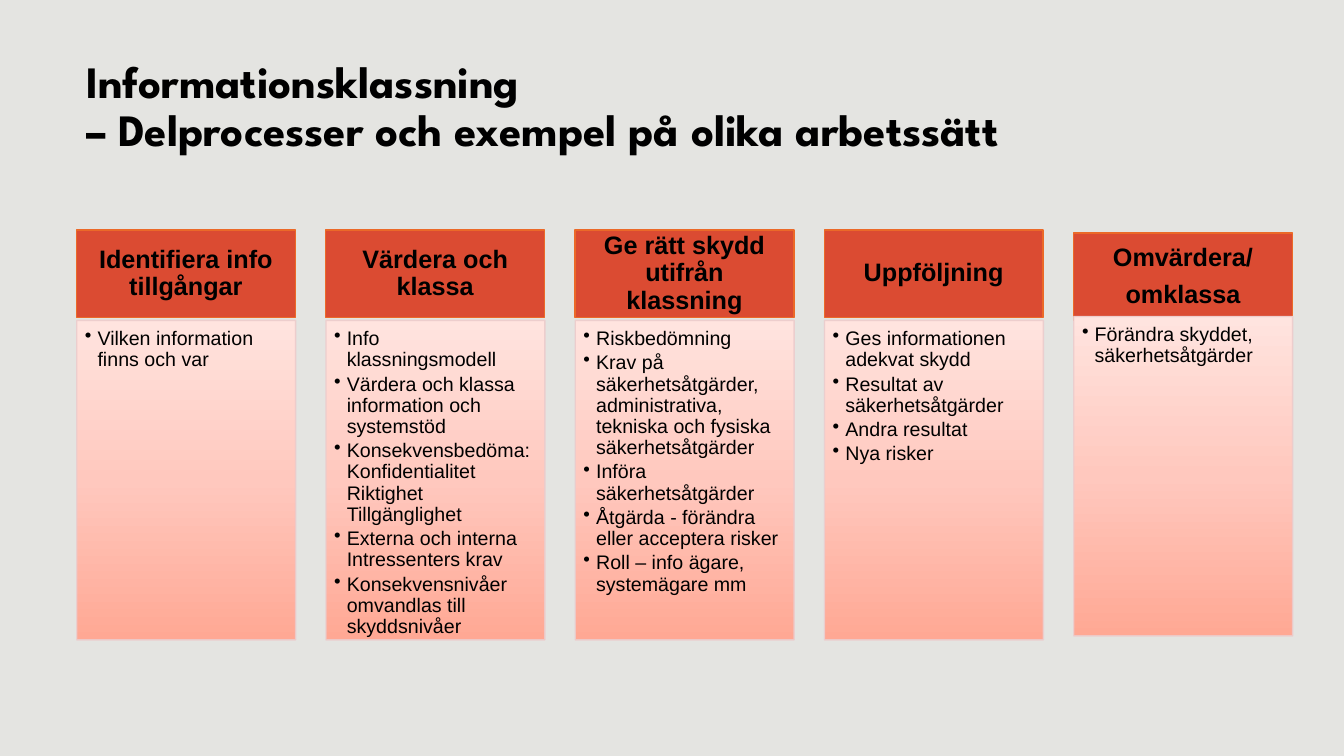
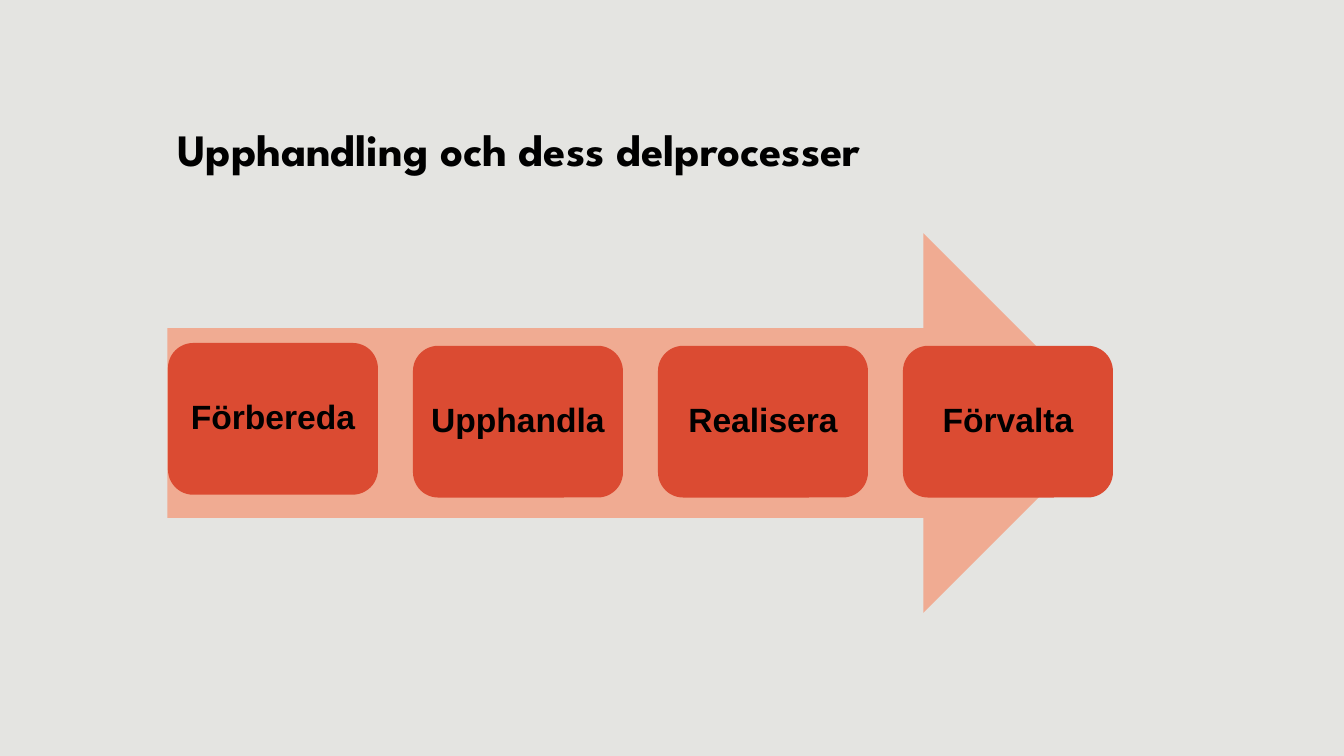
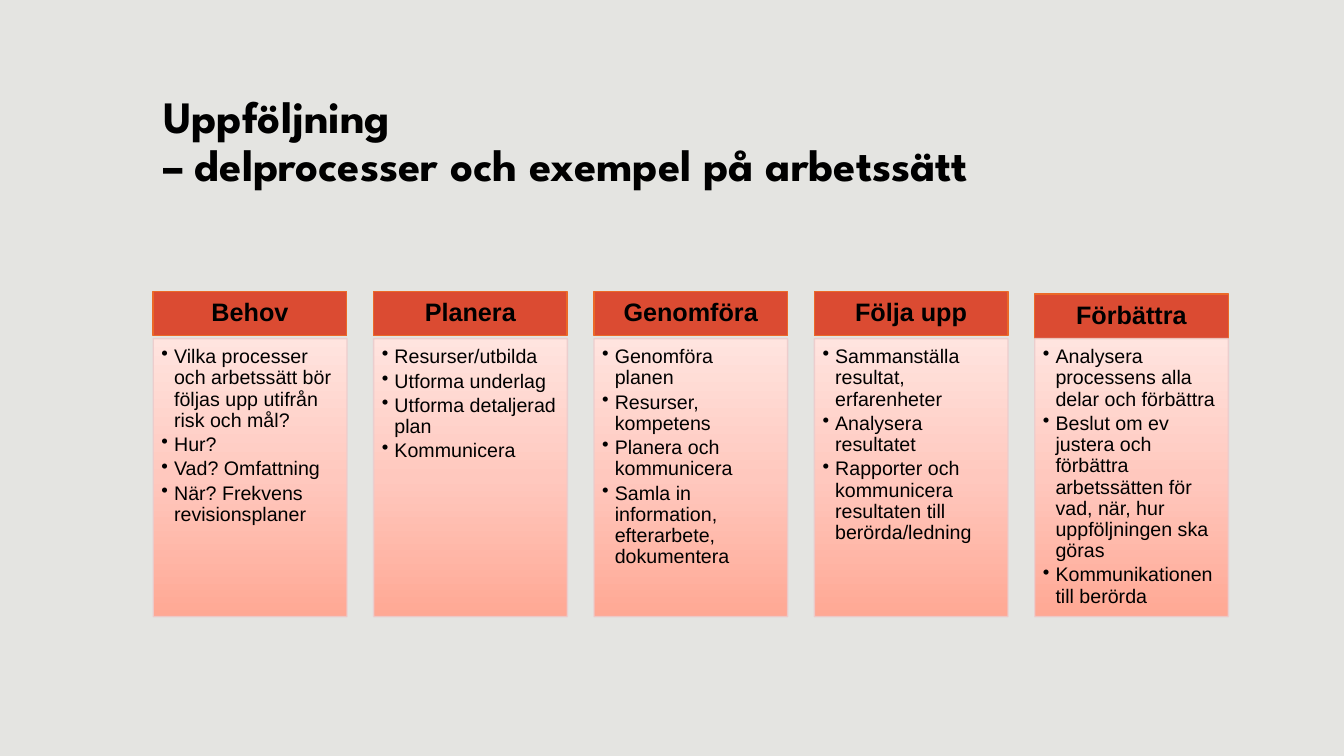
"""Build three slides about the subprocesses of information security work."""
from copy import deepcopy
from dataclasses import dataclass

from lxml import etree
from pptx import Presentation
from pptx.dml.color import RGBColor
from pptx.enum.shapes import MSO_SHAPE
from pptx.enum.text import MSO_ANCHOR, PP_ALIGN
from pptx.oxml.ns import qn
from pptx.util import Pt

RECT = MSO_SHAPE.RECTANGLE
ROUND = MSO_SHAPE.ROUNDED_RECTANGLE
ARROW = MSO_SHAPE.RIGHT_ARROW
TOP, MID = MSO_ANCHOR.TOP, MSO_ANCHOR.MIDDLE
LEFT, CENTER = PP_ALIGN.LEFT, PP_ALIGN.CENTER

COLORS = {
    "back": "E4E4E1", "text": "000000", "red": "DB4B32", "edge": "EB6928",
    "arrow": "F0AB92", "rim": "ECCCCC",
    "low": "FFA894", "half": "FFC8BE", "high": "FFE4DF",
}
FADE = ((0, "low"), (0.5, "half"), (1, "high"))


@dataclass
class Box:
    x: float
    y: float
    w: float
    h: float


@dataclass
class Style:
    size: float
    after: float = 0
    bold: bool = True
    face: str = "Arial"
    align: int = CENTER
    anchor: int = MID
    inset: tuple = (7.2, 7.2, 7.2, 7.2)
    bullet: bool = False


@dataclass
class Column:
    head: list
    items: list


@dataclass
class Grid:
    """Place of the first column, the step, and the shift of the last one."""
    head: Box
    body: Box
    step: float
    sink: float
    lift: float


TITLE = Style(32, face="League Spartan", align=LEFT, anchor=TOP,
              inset=(7.2, 3.6, 7.2, 3.6))
HEAD = Style(18, after=7.2, inset=(10.08, 5.76, 10.08, 5.76))
BODY = Style(14, after=2.2, bold=False, align=LEFT, anchor=TOP,
             inset=(5.88, 5.88, 7.84, 8.82), bullet=True)
STEP = Style(24)

CLASS_GRID = Grid(Box(54.6, 164.2, 156.4, 62.6), Box(54.8, 228.9, 156.4, 228.2),
                  178.05, 2.2, 2.8)
CHECK_GRID = Grid(Box(109.4, 208.2, 138.4, 31.7), Box(109.5, 241.9, 138.4, 198.6),
                  157.4, 1.8, 0)

CLASS_COLS = [
    Column(["Identifiera info tillgångar"], ["Vilken information finns och var"]),
    Column(["Värdera och klassa"], [
        "Info klassningsmodell",
        "Värdera och klassa information och systemstöd",
        "Konsekvensbedöma: Konfidentialitet Riktighet Tillgänglighet",
        "Externa och interna Intressenters krav",
        "Konsekvensnivåer omvandlas till skyddsnivåer"]),
    Column(["Ge rätt skydd utifrån klassning"], [
        "Riskbedömning",
        "Krav på säkerhetsåtgärder, administrativa, tekniska och fysiska "
        "säkerhetsåtgärder",
        "Införa säkerhetsåtgärder",
        "Åtgärda - förändra eller acceptera risker",
        "Roll – info ägare, systemägare mm"]),
    Column(["Uppföljning"], [
        "Ges informationen adekvat skydd", "Resultat av säkerhetsåtgärder",
        "Andra resultat", "Nya risker"]),
    Column(["Omvärdera/", "omklassa"], ["Förändra skyddet, säkerhetsåtgärder"]),
]
CHECK_COLS = [
    Column(["Behov"], [
        "Vilka processer och arbetssätt bör följas upp utifrån risk och mål?",
        "Hur?", "Vad? Omfattning", "När? Frekvens revisionsplaner"]),
    Column(["Planera"], [
        "Resurser/utbilda", "Utforma underlag", "Utforma detaljerad plan",
        "Kommunicera"]),
    Column(["Genomföra"], [
        "Genomföra planen", "Resurser, kompetens", "Planera och kommunicera",
        "Samla in information, efterarbete, dokumentera"]),
    Column(["Följa upp"], [
        "Sammanställa resultat, erfarenheter", "Analysera resultatet",
        "Rapporter och kommunicera resultaten till berörda/ledning"]),
    Column(["Förbättra"], [
        "Analysera processens alla delar och förbättra",
        "Beslut om ev justera och förbättra arbetssätten för vad, när, hur "
        "uppföljningen ska göras",
        "Kommunikationen till berörda"]),
]
STEPS = ["Förbereda", "Upphandla", "Realisera", "Förvalta"]


def color(name: str) -> RGBColor:
    return RGBColor.from_string(COLORS[name])


def place(box: Box) -> tuple:
    return Pt(box.x), Pt(box.y), Pt(box.w), Pt(box.h)


def write(shape, lines: list, style: Style) -> None:
    frame = shape.text_frame
    frame.word_wrap = True
    frame.vertical_anchor = style.anchor
    (frame.margin_left, frame.margin_top,
     frame.margin_right, frame.margin_bottom) = map(Pt, style.inset)
    for i, line in enumerate(lines):
        para = frame.add_paragraph() if i else frame.paragraphs[0]
        para.text = line
        para.alignment = style.align
        para.line_spacing = 0.9
        para.space_after = Pt(style.after)
        if style.bullet:
            props = para._p.get_or_add_pPr()
            props.set("marL", str(Pt(9)))
            props.set("indent", str(Pt(-9)))
            etree.SubElement(props, qn("a:buChar")).set("char", "•")
        font = para.font
        font.name, font.size, font.bold = style.face, Pt(style.size), style.bold
        font.color.rgb = color("text")


def draw(slide, kind: int, box: Box, fill: str = "", line: str = ""):
    shape = slide.shapes.add_shape(kind, *place(box))
    shape.shadow.inherit = False
    if fill:
        shape.fill.solid()
        shape.fill.fore_color.rgb = color(fill)
    if line:
        shape.line.color.rgb = color(line)
        shape.line.width = Pt(1)
    else:
        shape.line.fill.background()
    return shape


def fade(shape) -> None:
    shape.fill.gradient()
    shape.fill.gradient_angle = 90
    stops = shape._element.spPr.find(".//" + qn("a:gsLst"))
    stops.append(deepcopy(stops[0]))
    for stop, (pos, name) in zip(shape.fill.gradient_stops, FADE):
        stop.position = pos
        stop.color.rgb = color(name)
    rim = shape._element.spPr.find(qn("a:ln")).find(".//" + qn("a:srgbClr"))
    etree.SubElement(rim, qn("a:alpha")).set("val", "90000")


def page(deck, title: str, box: Box):
    slide = deck.slides.add_slide(deck.slide_layouts[6])
    write(slide.shapes.add_textbox(*place(box)), [title], TITLE)
    return slide


def table(slide, grid: Grid, cols: list) -> None:
    for i, col in enumerate(cols):
        last = i == len(cols) - 1
        head, body = grid.head, grid.body
        move = i * grid.step
        top = Box(head.x + move, head.y + last * grid.sink, head.w, head.h)
        low = Box(body.x + move, body.y - last * grid.lift, body.w, body.h)
        write(draw(slide, RECT, top, "red", "edge"), col.head, HEAD)
        panel = draw(slide, RECT, low, line="rim")
        fade(panel)
        write(panel, col.items, BODY)


def flow(slide) -> None:
    draw(slide, ARROW, Box(119.5, 166.6, 675.6, 271.2), "arrow")
    for i, name in enumerate(STEPS):
        box = Box(120 + i * 175, 247 if i else 245, 150, 108.4)
        write(draw(slide, ROUND, box, "red"), [name], STEP)


def main() -> None:
    deck = Presentation()
    deck.slide_width, deck.slide_height = Pt(960), Pt(540)
    back = deck.slide_master.background.fill
    back.solid()
    back.fore_color.rgb = color("back")
    table(page(deck, "Informationsklassning\v"
               "– Delprocesser och exempel på olika arbetssätt",
               Box(54.6, 38.9, 828, 73.4)), CLASS_GRID, CLASS_COLS)
    flow(page(deck, "Upphandling och dess delprocesser",
              Box(119.5, 87.8, 828, 40.3)))
    table(page(deck, "Uppföljning\v– delprocesser och exempel på arbetssätt",
               Box(109.4, 64.1, 828, 40.3)), CHECK_GRID, CHECK_COLS)
    deck.save("out.pptx")


if __name__ == "__main__":
    main()
